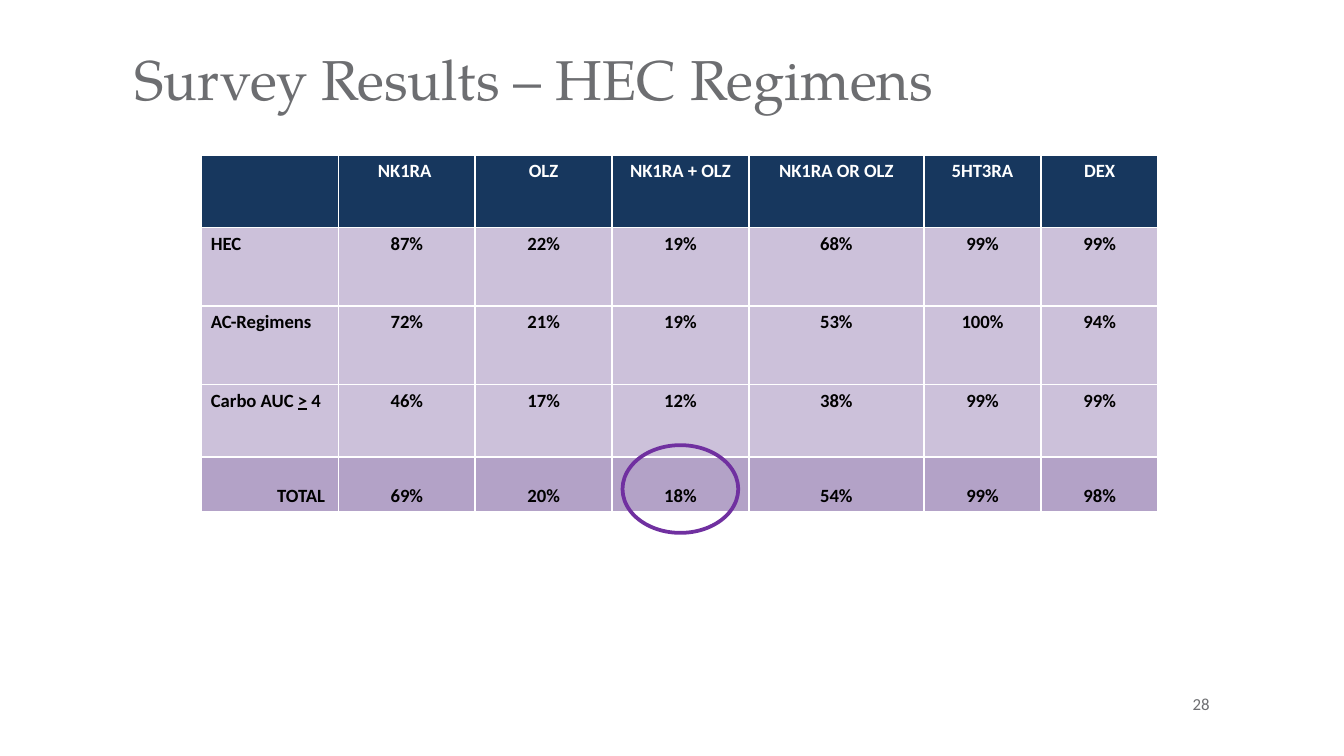
from typing import NamedTuple

from lxml import etree
from pptx import Presentation
from pptx.dml.color import RGBColor
from pptx.enum import shapes, text
from pptx.oxml.ns import qn
from pptx.util import Pt

COLORS = {
    "gray": "6D6E71",
    "navy": "17375E",
    "lilac": "CCC1DA",
    "mauve": "B3A2C7",
    "purple": "7030A0",
    "white": "FFFFFF",
    "black": "000000",
}
LEFT, CENTER, RIGHT = text.PP_ALIGN.LEFT, text.PP_ALIGN.CENTER, text.PP_ALIGN.RIGHT
TOP, MIDDLE, BOTTOM = text.MSO_ANCHOR.TOP, text.MSO_ANCHOR.MIDDLE, text.MSO_ANCHOR.BOTTOM


class Run(NamedTuple):
    words: str
    underline: bool = False


class RegimenRow(NamedTuple):
    height: float
    label: tuple[Run, ...]
    values: tuple[str, ...]
    fill: str = "lilac"
    color: str = "black"
    label_align: text.PP_ALIGN = LEFT
    anchor: text.MSO_ANCHOR = TOP


COLUMN_WIDTHS = [73.3] * 4 + [93.8] + [62.8] * 2
ROWS = [
    RegimenRow(39, (), ("NK1RA ", "OLZ", "NK1RA + OLZ", "NK1RA OR OLZ", "5HT3RA", "DEX"),
               fill="navy", color="white"),
    RegimenRow(42, (Run("HEC"),), ("87%", "22%", "19%", "68%", "99%", "99%")),
    RegimenRow(42, (Run("AC-Regimens"),), ("72%", "21%", "19%", "53%", "100%", "94%")),
    RegimenRow(39, (Run("Carbo AUC "), Run(">", underline=True), Run(" 4")),
               ("46%", "17%", "12%", "38%", "99%", "99%")),
    RegimenRow(29.5, (Run("TOTAL "),), ("69%", "20%", "18%", "54%", "99%", "98%"),
               fill="mauve", label_align=RIGHT, anchor=BOTTOM),
]


def rgb(name: str) -> RGBColor:
    return RGBColor.from_string(COLORS[name])


def write(frame, runs: tuple[Run, ...], *, size: float, color: str, font: str = "Calibri",
          bold: bool = False, align: text.PP_ALIGN = LEFT) -> None:
    paragraph = frame.paragraphs[0]
    paragraph.alignment = align
    paragraph.font.size = Pt(size)
    for words, underline in runs:
        run = paragraph.add_run()
        run.text = words
        run.font.name = font
        run.font.size = Pt(size)
        run.font.bold = bold
        run.font.color.rgb = rgb(color)
        if underline:
            run.font.underline = True


def place(shape, left: float, top: float, width: float, height: float,
          anchor: text.MSO_ANCHOR) -> None:
    """Position a text shape and remove its inner margins."""
    shape.left, shape.top, shape.width, shape.height = map(Pt, (left, top, width, height))
    frame = shape.text_frame
    frame.margin_left = frame.margin_top = frame.margin_right = frame.margin_bottom = 0
    frame.word_wrap = True
    frame.auto_size = text.MSO_AUTO_SIZE.NONE
    frame.vertical_anchor = anchor


def format_cell(cell, fill: str, anchor: text.MSO_ANCHOR) -> None:
    """Give a cell white 1 pt borders, a fill, margins and an anchor."""
    cell.margin_left = cell.margin_right = Pt(5)
    cell.margin_top = cell.margin_bottom = Pt(2.7)
    cell.vertical_anchor = anchor
    properties = cell._tc.get_or_add_tcPr()
    for side in ("lnL", "lnR", "lnT", "lnB"):
        line = etree.SubElement(properties, qn(f"a:{side}"), w=str(Pt(1)))
        solid = etree.SubElement(line, qn("a:solidFill"))
        etree.SubElement(solid, qn("a:srgbClr"), val=COLORS["white"])
    cell.fill.solid()
    cell.fill.fore_color.rgb = rgb(fill)


def add_regimen_table(slide, left: float, top: float) -> None:
    table = slide.shapes.add_table(
        len(ROWS), len(COLUMN_WIDTHS), Pt(left), Pt(top),
        Pt(sum(COLUMN_WIDTHS)), Pt(sum(row.height for row in ROWS))).table
    table.horz_banding = False
    for column, width in zip(table.columns, COLUMN_WIDTHS):
        column.width = Pt(width)
    for r, row in enumerate(ROWS):
        table.rows[r].height = Pt(row.height)
        entries = [row.label] + [(Run(value),) for value in row.values]
        for c, runs in enumerate(entries):
            cell = table.cell(r, c)
            format_cell(cell, row.fill, row.anchor)
            write(cell.text_frame, runs, size=10, color=row.color, bold=True,
                  align=CENTER if c else row.label_align)


def add_highlight(slide, left: float, top: float, width: float, height: float) -> None:
    ring = slide.shapes.add_shape(shapes.MSO_SHAPE.OVAL, Pt(left), Pt(top), Pt(width), Pt(height))
    ring.shadow.inherit = False
    ring.fill.background()
    ring.line.color.rgb = rgb("purple")
    ring.line.width = Pt(2)


def main() -> None:
    deck = Presentation()
    deck.slide_width, deck.slide_height = Pt(720), Pt(405)
    slide = deck.slides.add_slide(deck.slide_layouts[5])

    title = slide.shapes.title
    place(title, 72, 24, 576, 36, MIDDLE)
    write(title.text_frame, (Run("Survey Results – HEC Regimens"),), size=30,
          color="gray", font="TeX Gyre Pagella")

    page_number = slide.shapes.add_textbox(0, 0, 0, 0)
    place(page_number, 480, 361, 168, 21.5, BOTTOM)
    write(page_number.text_frame, (Run("28"),), size=9, color="gray", align=RIGHT)

    add_regimen_table(slide, 108, 83)
    add_highlight(slide, 333.5, 238.5, 62, 47)
    deck.save("out.pptx")


if __name__ == "__main__":
    main()
